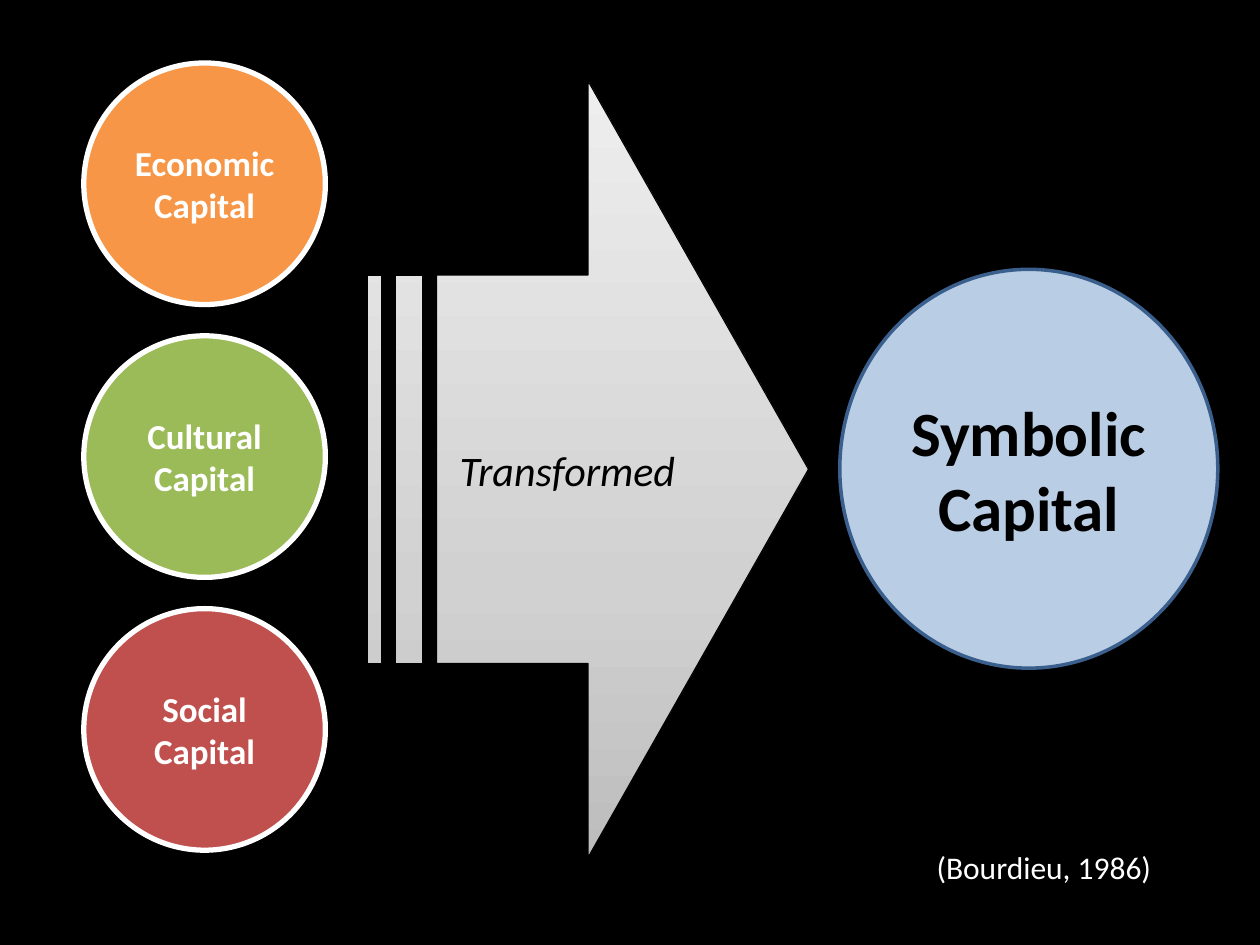
from copy import deepcopy
from dataclasses import dataclass

from pptx import Presentation
from pptx import util as u
from pptx.dml.color import RGBColor
from pptx.enum import shapes, text


@dataclass(frozen=True)
class Theme:
    font: str = "Calibri"
    background: str = "000000"
    light: str = "FFFFFF"
    dark: str = "000000"
    economic: str = "F79646"
    cultural: str = "9BBB59"
    social: str = "C0504D"
    symbolic: str = "B9CDE5"
    symbolic_line: str = "3A5F8C"
    arrow_stops: tuple = ((0, "BDBDBD"), (0.35, "D1D1D1"), (1, "EEEEEE"))
    capital_size: int = 20
    symbolic_size: int = 36
    arrow_size: int = 24
    citation_size: int = 18


THEME = Theme()


def rgb(color):
    return RGBColor.from_string(color)


def set_text(shape, wording, size, color, align, bold=False, italic=False):
    shape.text_frame.word_wrap = True
    shape.text_frame.text = wording
    paragraph = shape.text_frame.paragraphs[0]
    paragraph.alignment = align
    for run in paragraph.runs:
        font = run.font
        font.name, font.size = THEME.font, u.Pt(size)
        font.bold, font.italic = bold, italic
        font.color.rgb = rgb(color)


def add_outlined_shape(slide, kind, box, line_color, line_width):
    """Add a preset shape; box is left, top, width and height in cm."""
    shape = slide.shapes.add_shape(kind, *map(u.Cm, box))
    shape.shadow.inherit = False
    shape.line.color.rgb = rgb(line_color)
    shape.line.width = u.Pt(line_width)
    shape.text_frame.vertical_anchor = text.MSO_ANCHOR.MIDDLE
    return shape


def add_circle(slide, wording, box, fill, line_color, line_width, size, color):
    circle = add_outlined_shape(
        slide, shapes.MSO_SHAPE.OVAL, box, line_color, line_width)
    circle.fill.solid()
    circle.fill.fore_color.rgb = rgb(fill)
    set_text(circle, wording, size, color, text.PP_ALIGN.CENTER, bold=True)


def set_upward_gradient(shape, stops):
    fill = shape.fill
    fill.gradient()
    fill.gradient_angle = 90
    stop_list = shape.element.spPr.gradFill.gsLst
    while len(stop_list) < len(stops):
        stop_list.append(deepcopy(stop_list[0]))
    for stop, (position, color) in zip(fill.gradient_stops, stops):
        stop.position = position
        stop.color.rgb = rgb(color)


def add_arrow(slide, wording, box):
    arrow = add_outlined_shape(
        slide, shapes.MSO_SHAPE.STRIPED_RIGHT_ARROW, box, THEME.dark, 0.75)
    set_upward_gradient(arrow, THEME.arrow_stops)
    set_text(arrow, wording, THEME.arrow_size, THEME.dark,
             text.PP_ALIGN.CENTER, italic=True)


def add_citation(slide, wording, box):
    citation = slide.shapes.add_textbox(*map(u.Cm, box))
    set_text(citation, wording, THEME.citation_size, THEME.light,
             text.PP_ALIGN.LEFT)


def main():
    presentation = Presentation()
    presentation.slide_width, presentation.slide_height = u.Cm(25.4), u.Cm(19.05)
    slide = presentation.slides.add_slide(presentation.slide_layouts[6])
    slide.background.fill.solid()
    slide.background.fill.fore_color.rgb = rgb(THEME.background)

    add_circle(slide, "Symbolic Capital", (16.93, 5.43, 7.62, 8.04),
               THEME.symbolic, THEME.symbolic_line, 2,
               THEME.symbolic_size, THEME.dark)

    capitals = (("Economic Capital", THEME.economic),
                ("Cultural Capital", THEME.cultural),
                ("Social Capital", THEME.social))
    diameter, pitch = 4.87, 5.5
    for row, (wording, fill) in enumerate(capitals):
        add_circle(slide, wording, (1.69, 1.27 + row * pitch, diameter, diameter),
                   fill, THEME.light, 3, THEME.capital_size, THEME.light)

    add_arrow(slide, "Transformed", (7.41, 1.63, 8.89, 15.66))
    add_citation(slide, "(Bourdieu, 1986)", (18.63, 16.97, 6.98, 1.02))
    presentation.save("out.pptx")


if __name__ == "__main__":
    main()
